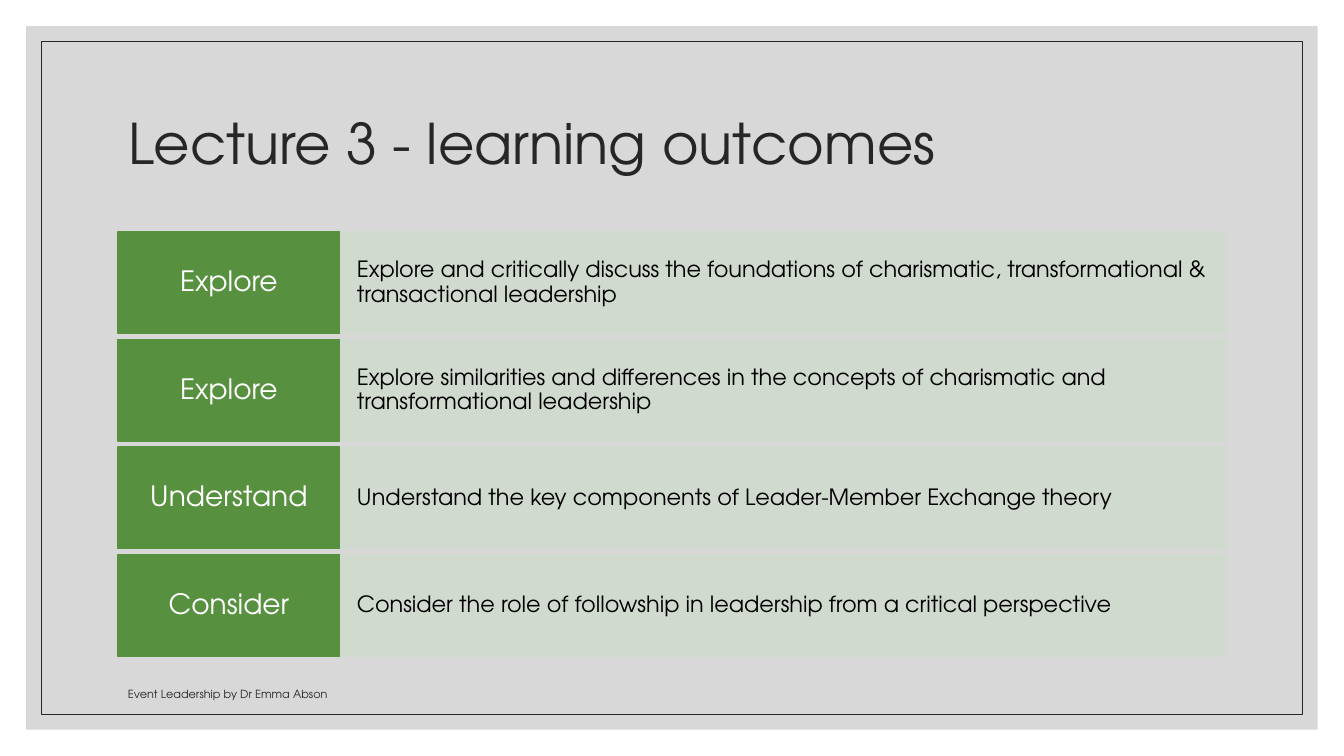
import pptx
import pptx.util
import pptx.dml.color
import pptx.enum.shapes
import pptx.enum.text
import lxml.etree

Inches, Pt = pptx.util.Inches, pptx.util.Pt
RGB = pptx.dml.color.RGBColor
Align, Anchor = pptx.enum.text.PP_ALIGN, pptx.enum.text.MSO_ANCHOR

FONT = "TeX Gyre Adventor"
COLOURS = {"frame": "BFBFBF", "ink": "262626", "verb": "57903F",
           "outcome": "D1DBCF", "black": "000000", "white": "FFFFFF"}
OUTCOMES = [
    ("Explore", "Explore and critically discuss the foundations of charismatic, "
                "transformational & transactional leadership"),
    ("Explore", "Explore similarities and differences in the concepts of charismatic "
                "and transformational leadership"),
    ("Understand", "Understand the key components of Leader-Member Exchange theory"),
    ("Consider", "Consider the role of followship in leadership from a critical perspective"),
]

# Grid, in inches
WIDTH, HEIGHT = 13.33, 7.5
LEFT, CONTENT_WIDTH = 1.17, 11
VERB_WIDTH = CONTENT_WIDTH / 5
TOP, ROW_HEIGHT, ROW_STEP = 2.3, 1.01, 1.067


def add_panel(left, top, width, height, fill=None, line=None, weight=1, opacity=100):
    """Add a rectangle with optional fill and line of the given opacity."""
    panel = page.shapes.add_shape(pptx.enum.shapes.MSO_SHAPE.RECTANGLE,
                                  Inches(left), Inches(top), Inches(width), Inches(height))
    panel.shadow.inherit = False
    for part, colour in ((panel.fill, fill), (panel.line.fill, line)):
        if colour is None:
            part.background()
        else:
            part.solid()
            part.fore_color.rgb = RGB.from_string(COLOURS[colour])
    if line:
        panel.line.width = Pt(weight)
    if opacity < 100:
        for colour in list(panel.element.spPr.iter(pptx.oxml.ns.qn("a:srgbClr"))):
            alpha = lxml.etree.SubElement(colour, pptx.oxml.ns.qn("a:alpha"))
            alpha.set("val", str(opacity * 1000))
    return panel


def write(box, text, size, colour, anchor=Anchor.MIDDLE, align=Align.LEFT,
          spacing=0.9, inset=(0.1, 0.05)):
    """Put one formatted paragraph into a shape."""
    frame = box.text_frame
    frame.text = text
    frame.word_wrap = True
    frame.auto_size = pptx.enum.text.MSO_AUTO_SIZE.NONE
    frame.vertical_anchor = anchor
    frame.margin_left = frame.margin_right = Inches(inset[0])
    frame.margin_top = frame.margin_bottom = Inches(inset[1])
    para = frame.paragraphs[0]
    para.alignment = align
    para.line_spacing = spacing
    font = para.runs[0].font
    font.name, font.size = FONT, Pt(size)
    font.color.rgb = RGB.from_string(COLOURS[colour])


deck = pptx.Presentation()
deck.slide_width, deck.slide_height = Inches(WIDTH), Inches(HEIGHT)
page = deck.slides.add_slide(deck.slide_layouts[5])

# Grey frame with a thin inner border
for margin, style in ((0.26, {"fill": "frame", "opacity": 60}),
                      (0.41, {"line": "ink", "weight": 0.5})):
    border = add_panel(margin, margin, WIDTH - 2 * margin, HEIGHT - 2 * margin, **style)

# Title, in front of the frame
title = page.shapes.title
title.left, title.top = Inches(LEFT), Inches(0.7)
title.width, title.height = Inches(CONTENT_WIDTH), Inches(1.5)
write(title, "Lecture 3 - learning outcomes", 40, "ink")
border.element.addnext(title.element)

# Footer
footer = page.shapes.add_textbox(Inches(LEFT), Inches(6.6), Inches(6.36), Inches(0.4))
write(footer, "Event Leadership by Dr Emma Abson", 8, "ink", Anchor.BOTTOM, spacing=1)

# One row per learning outcome
for row, (verb, outcome) in enumerate(OUTCOMES):
    top = TOP + row * ROW_STEP
    outcome_box = add_panel(LEFT + VERB_WIDTH, top, CONTENT_WIDTH - VERB_WIDTH, ROW_HEIGHT,
                            "outcome", "outcome", opacity=90)
    write(outcome_box, outcome, 16, "black", inset=(0.17, 0.26))
    verb_box = add_panel(LEFT, top, VERB_WIDTH, ROW_HEIGHT, "verb", "verb")
    write(verb_box, verb, 20, "white", align=Align.CENTER, inset=(0.12, 0.1))

deck.save("out.pptx")
